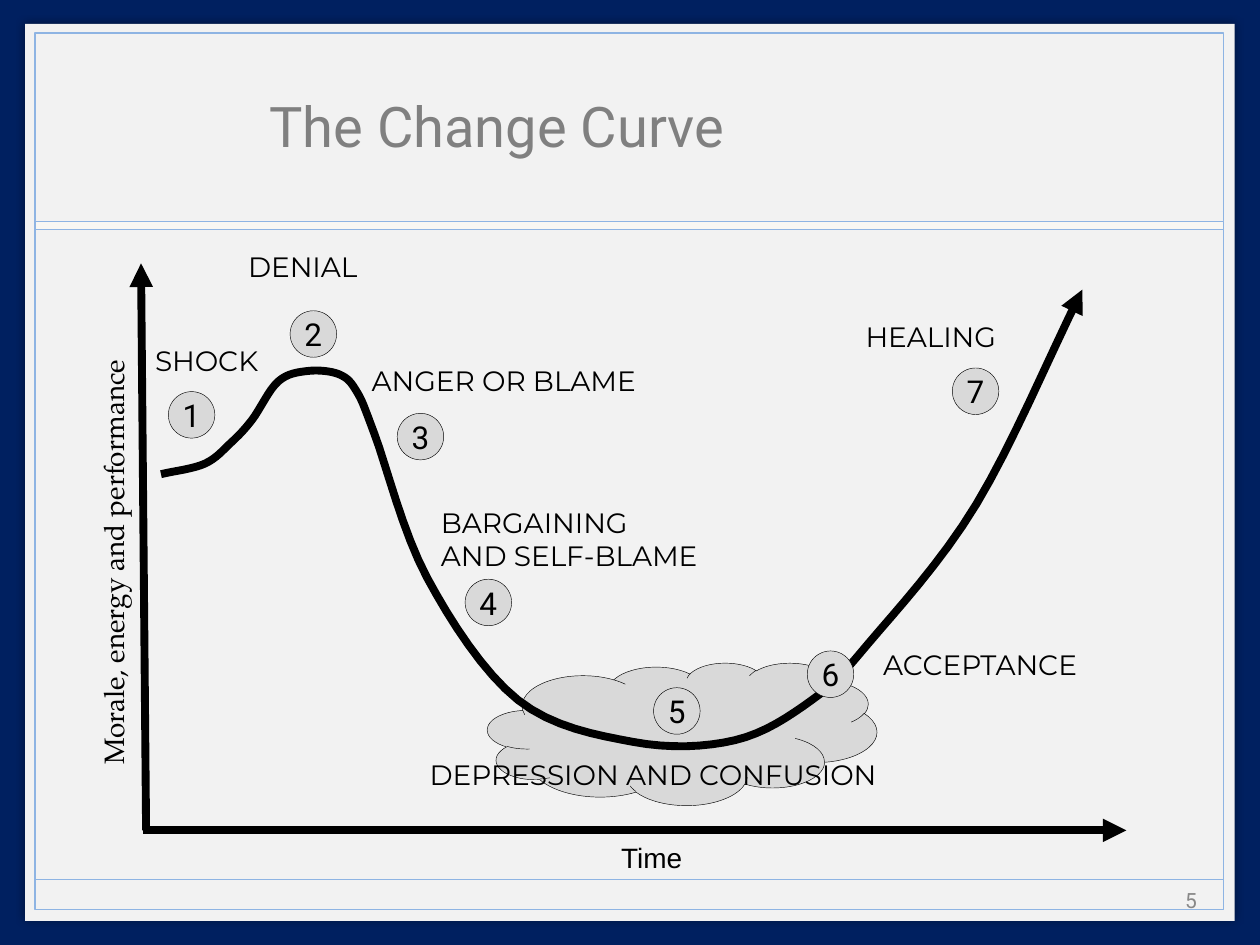
from dataclasses import dataclass

from lxml.etree import SubElement
from pptx import Presentation
from pptx.dml.color import RGBColor
from pptx.enum.shapes import MSO_CONNECTOR, MSO_SHAPE
from pptx.enum.text import MSO_ANCHOR, MSO_AUTO_SIZE, PP_ALIGN
from pptx.oxml.ns import qn
from pptx.slide import Slide
from pptx.util import Pt

NAVY = RGBColor(0x00, 0x20, 0x60)
PAPER = RGBColor(0xF2, 0xF2, 0xF2)
IVORY = RGBColor(0xF8, 0xF7, 0xF3)
SKY = RGBColor(0x8E, 0xB4, 0xE3)
SILVER = RGBColor(0xD9, 0xD9, 0xD9)
TITLE_GRAY = RGBColor(0x80, 0x80, 0x80)
NUMBER_GRAY = RGBColor(0x88, 0x88, 0x88)
BLACK = RGBColor(0, 0, 0)

HEAVY, HAIRLINE = 4.5, 0.25
BADGE_SIZE = 26.6
CURVE_STEPS = 8

STAGES = [
    ("SHOCK", (85, 193, 72, 30), (96.2, 223.8)),
    ("DENIAL", (138.2, 139, 75, 30), (165.8, 177.6)),
    ("ANGER OR BLAME", (208.8, 204.5, 170, 30), (227, 236.2)),
    ("BARGAINING\nAND SELF-BLAME", (248.4, 285.1, 163.4, 53.3), (265.8, 331)),
    ("DEPRESSION AND CONFUSION", (241.9, 429.1, 280, 30), (373.5, 393)),
    ("ACCEPTANCE", (501.1, 366.5, 129, 30), (461.3, 372)),
    ("HEALING", (491, 179.3, 104.4, 30), (544.2, 210.3)),
]
MORALE = [
    (92, 271), (117, 265), (132, 253), (144, 240), (159, 218), (176, 212),
    (194, 214), (204, 224), (214, 248), (244, 330), (296, 400), (362, 424),
    (420, 423), (464, 400), (496, 368), (558, 288), (618.5, 165.5),
]


def smooth(anchors):
    (x0, y0), (x1, y1) = anchors[:2]
    (xm, ym), (xn, yn) = anchors[-2:]
    knots = [(2 * x0 - x1, 2 * y0 - y1), *anchors, (2 * xn - xm, 2 * yn - ym)]
    points = [anchors[0]]
    for quad in zip(knots, knots[1:], knots[2:], knots[3:]):
        for step in range(1, CURVE_STEPS + 1):
            t = step / CURVE_STEPS
            points.append(tuple(
                (2 * b + (c - a) * t + (2 * a - 5 * b + 4 * c - d) * t**2
                 + (3 * b - a - 3 * c + d) * t**3) / 2
                for a, b, c, d in zip(*quad)))
    return points


@dataclass
class ChangeSlide:
    slide: Slide
    ink: RGBColor = BLACK
    label_font: str = "Montserrat"
    number_font: str = "Roboto"
    label_size: float = 16

    def stroke(self, shape, color, width, arrow=False):
        shape.line.color.rgb = color
        shape.line.width = Pt(width)
        if arrow:
            SubElement(shape.line._get_or_add_ln(), qn("a:tailEnd"), type="triangle")

    def set_text(self, shape, text, size, font, color, align=PP_ALIGN.LEFT,
                 anchor=MSO_ANCHOR.TOP, inset=0, wrap=True):
        frame = shape.text_frame
        frame.text = text
        layout = {"word_wrap": wrap, "auto_size": MSO_AUTO_SIZE.NONE,
                  "vertical_anchor": anchor}
        layout.update({f"margin_{side}": Pt(inset)
                       for side in ("left", "top", "right", "bottom")})
        for name, value in layout.items():
            setattr(frame, name, value)
        for paragraph in frame.paragraphs:
            paragraph.alignment = align
            for name, value in {"size": Pt(size), "name": font}.items():
                setattr(paragraph.font, name, value)
            paragraph.font.color.rgb = color

    def shape(self, kind, box, fill=None, line=None, width=HAIRLINE):
        shape = self.slide.shapes.add_shape(kind, *map(Pt, box))
        shape.shadow.inherit = False
        if fill is None:
            shape.fill.background()
        else:
            shape.fill.solid()
            shape.fill.fore_color.rgb = fill
        if line is None:
            shape.line.fill.background()
        else:
            self.stroke(shape, line, width)
        return shape

    def panel(self, box):
        panel = self.shape(MSO_SHAPE.RECTANGLE, box, PAPER)
        effects = panel._element.spPr.find(qn("a:effectLst"))
        shadow = SubElement(effects, qn("a:outerShdw"), blurRad=str(Pt(5)))
        color = SubElement(shadow, qn("a:srgbClr"), val=str(BLACK))
        SubElement(color, qn("a:alpha"), val="40000")

    def line(self, start, end, color, width, arrow=False):
        line = self.slide.shapes.add_connector(
            MSO_CONNECTOR.STRAIGHT, *map(Pt, (*start, *end)))
        self.stroke(line, color, width, arrow)
        SubElement(line._element.spPr, qn("a:effectLst"))

    def curve(self, anchors):
        start, *rest = [tuple(map(Pt, point)) for point in smooth(anchors)]
        builder = self.slide.shapes.build_freeform(*start)
        builder.add_line_segments(rest, close=False)
        curve = builder.convert_to_shape()
        curve.shadow.inherit = False
        curve.fill.background()
        self.stroke(curve, self.ink, HEAVY, arrow=True)

    def title(self, text, box):
        title = self.slide.shapes.title
        self.slide.shapes._spTree.append(title._element)
        for name, value in zip(("left", "top", "width", "height"), box):
            setattr(title, name, Pt(value))
        self.set_text(title, text, 32, self.number_font, TITLE_GRAY,
                      PP_ALIGN.CENTER, MSO_ANCHOR.MIDDLE)

    def label(self, text, box, font=None, rotation=0):
        label = self.slide.shapes.add_textbox(*map(Pt, box))
        label.rotation = rotation
        self.set_text(label, text, self.label_size, font or self.label_font,
                      self.ink, inset=3.6)

    def page_number(self, text, box):
        number = self.slide.shapes.add_textbox(*map(Pt, box))
        self.set_text(number, text, 12, self.number_font, NUMBER_GRAY,
                      PP_ALIGN.RIGHT, MSO_ANCHOR.MIDDLE, wrap=False)

    def badge(self, number, corner):
        badge = self.shape(MSO_SHAPE.OVAL, (*corner, BADGE_SIZE, BADGE_SIZE),
                           SILVER, self.ink)
        self.set_text(badge, str(number), 18, self.number_font, self.ink,
                      PP_ALIGN.CENTER, MSO_ANCHOR.MIDDLE, wrap=False)


def main():
    deck = Presentation()
    deck.slide_width, deck.slide_height = Pt(720), Pt(540)
    page = ChangeSlide(deck.slides.add_slide(deck.slide_layouts[5]))
    background = page.slide.background.fill
    background.solid()
    background.fore_color.rgb = NAVY

    page.panel((14.4, 13.7, 691.2, 512.6))
    page.shape(MSO_SHAPE.RECTANGLE, (20.2, 18.8, 679, 501), line=SKY, width=1)
    page.line((20.2, 502.5), (699.2, 502.5), SKY, 1)
    page.shape(MSO_SHAPE.RECTANGLE, (20.2, 126.2, 679, 5), IVORY, SKY)
    page.title("The Change Curve", (77, 39.6, 414, 64))
    page.page_number("5", (674, 507.6, 10, 13.7))

    page.shape(MSO_SHAPE.CLOUD, (278.6, 378.7, 222.5, 81.4), SILVER, BLACK)
    page.line((83.5, 474.5), (80.6, 150.5), BLACK, HEAVY, arrow=True)
    page.line((82, 474.5), (643.7, 474.5), BLACK, HEAVY, arrow=True)
    page.label("Morale, energy and performance", (-54.7, 306.7, 240.5, 27.4),
               "TeX Gyre Pagella", rotation=270)
    page.label("Time", (351.4, 476.6, 43.2, 24.5), "Arial")
    page.curve(MORALE)
    for number, (name, box, corner) in enumerate(STAGES, 1):
        page.label(name, box)
        page.badge(number, corner)
    deck.save("out.pptx")


if __name__ == "__main__":
    main()
